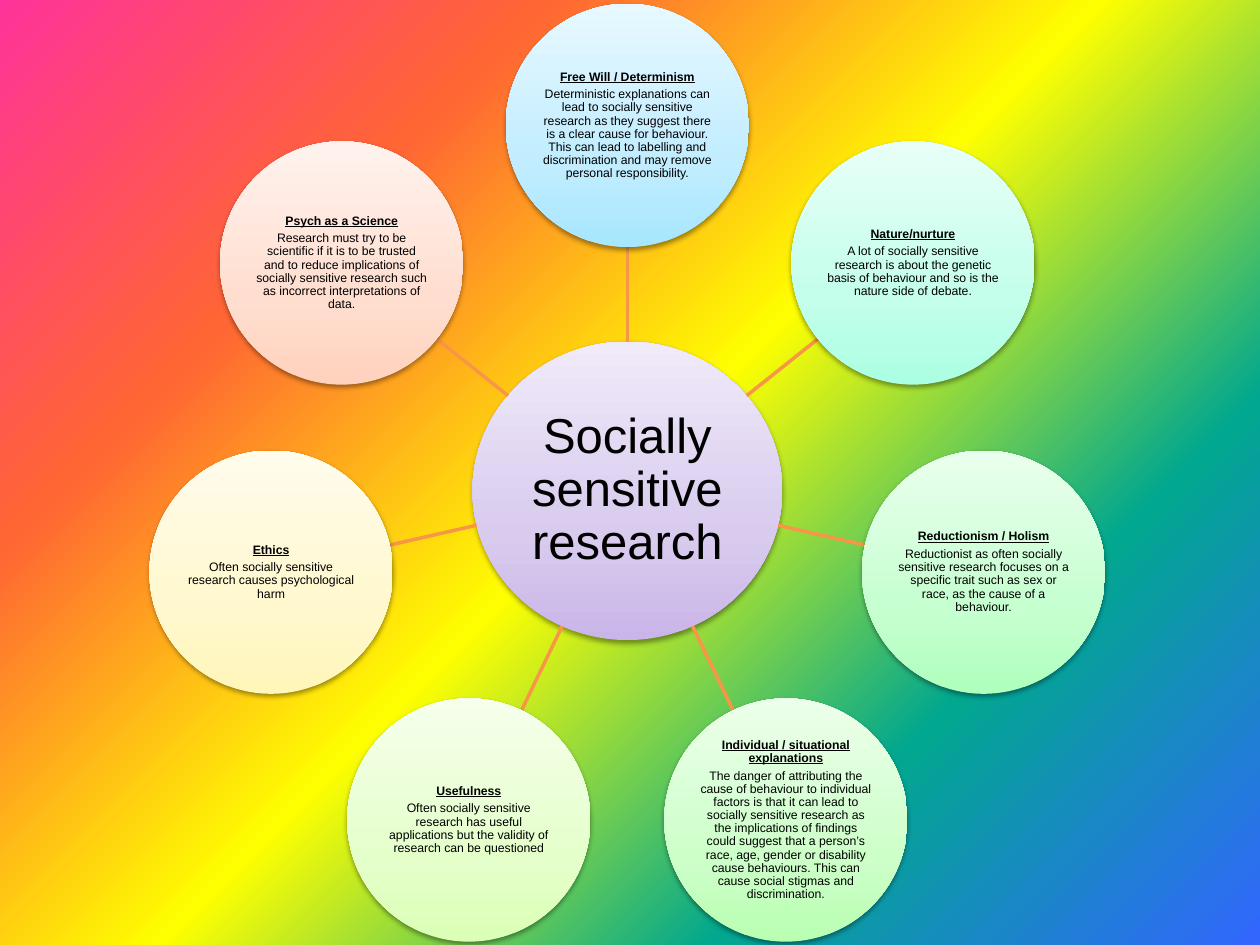
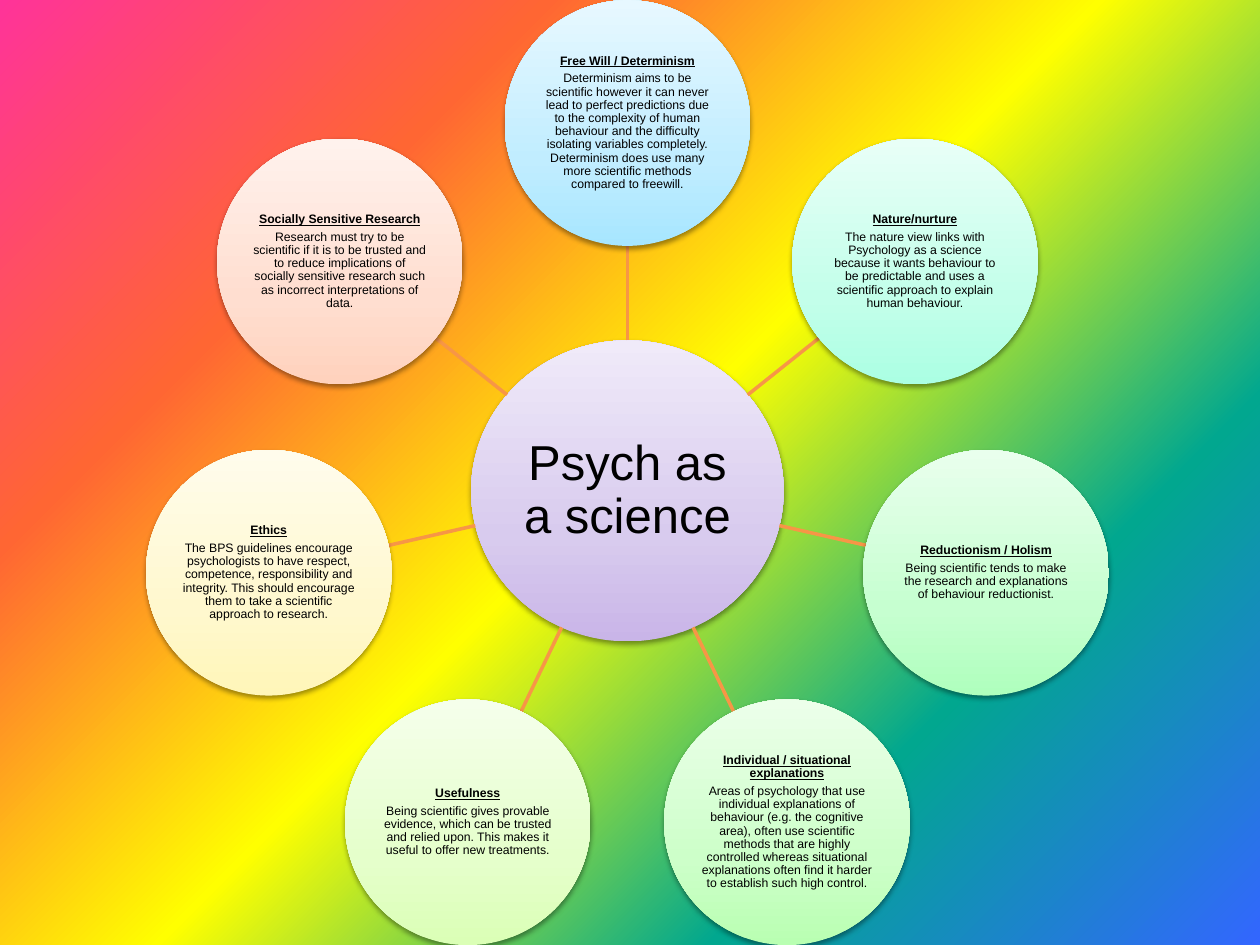
"""Builds two wheel diagrams linking psychology debates to a central theme."""
from math import cos, hypot, pi, sin

from lxml.etree import SubElement
from pptx import Presentation
from pptx.dml.color import RGBColor
from pptx.enum.shapes import MSO_CONNECTOR as CONNECTOR, MSO_SHAPE as SHAPE
from pptx.enum.text import MSO_ANCHOR as ANCHOR, PP_ALIGN as ALIGN
from pptx.oxml.ns import qn
from pptx.util import Pt

FONT = "Arial"
CENTRE_X, CENTRE_Y = 358.5, 280.5
BLACK = RGBColor(0x00, 0x00, 0x00)
ORANGE = RGBColor(0xF7, 0x96, 0x46)


def palette(*codes):
    """Turn hex codes into a tuple of colours."""
    return tuple(RGBColor.from_string(code) for code in codes)


RAINBOW = palette("FF3399", "FF6633", "FFFF00", "01A78F", "3366FF")
RAINBOW_STOPS = (0, 25, 50, 75, 100)
TINT_STOPS = (0, 35, 100)
LILAC = palette("C9B5E8", "D8CBEE", "F0EAF9")
DEBATE_TINTS = (
    palette("A7E6FF", "C1EDFF", "E7F8FF"),
    palette("ABFFE3", "C3FFEA", "E8FFF7"),
    palette("AFFFBD", "C6FFD0", "E9FFED"),
    palette("B9FFB2", "CDFFC9", "ECFFEA"),
    palette("DBFFB6", "E5FFCB", "F5FFEB"),
    palette("FFF6B9", "FFF8CE", "FFFCEC"),
    palette("FFD2BD", "FFDED0", "FFF2ED"),
)
SHARED_DEBATES = (
    "Free Will / Determinism",
    "Nature/nurture",
    "Reductionism / Holism",
    "Individual / situational explanations",
    "Usefulness",
    "Ethics",
)
TRUSTED_RESEARCH = (
    "Research must try to be scientific if it is to be trusted and to reduce "
    "implications of socially sensitive research such as incorrect "
    "interpretations of data."
)
SENSITIVE_WHEEL = dict(
    theme="Socially sensitive research",
    hub_size=(177, 170.6),
    circle_size=139,
    orbit=208.8,
    last_debate="Psych as a Science",
    arguments=(
        "Deterministic explanations can lead to socially sensitive research as "
        "they suggest there is a clear cause for behaviour. This can lead to "
        "labelling and discrimination and may remove personal responsibility.",
        "A lot of socially sensitive research is about the genetic basis of "
        "behaviour and so is the nature side of debate.",
        "Reductionist as often socially sensitive research focuses on a specific "
        "trait such as sex or race, as the cause of a behaviour.",
        "The danger of attributing the cause of behaviour to individual factors "
        "is that it can lead to socially sensitive research as the implications "
        "of findings could suggest that a person’s race, age, gender or "
        "disability cause behaviours. This can cause social stigmas and "
        "discrimination.",
        "Often socially sensitive research has useful applications but the "
        "validity of research can be questioned",
        "Often socially sensitive research causes psychological harm",
        TRUSTED_RESEARCH,
    ),
)
SCIENCE_WHEEL = dict(
    theme="Psych as a science",
    hub_size=(178.6, 172),
    circle_size=140.4,
    orbit=210.2,
    last_debate="Socially Sensitive Research",
    arguments=(
        "Determinism aims to be scientific however it can never lead to perfect "
        "predictions due to the complexity of human behaviour and the difficulty "
        "isolating variables completely. Determinism does use many more "
        "scientific methods compared to freewill.",
        "The nature view links with Psychology as a science because it wants "
        "behaviour to be predictable and uses a scientific approach to explain "
        "human behaviour.",
        "Being scientific tends to make the research and explanations of "
        "behaviour reductionist.",
        "Areas of psychology that use individual explanations of behaviour (e.g. "
        "the cognitive area), often use scientific methods that are highly "
        "controlled whereas situational explanations often find it harder to "
        "establish such high control.",
        "Being scientific gives provable evidence, which can be trusted and "
        "relied upon. This makes it useful to offer new treatments.",
        "The BPS guidelines encourage psychologists to have respect, competence, "
        "responsibility and integrity. This should encourage them to take a "
        "scientific approach to research.",
        TRUSTED_RESEARCH,
    ),
)


def set_gradient(owner, fill, colours, positions, angle):
    """Fill a slide background or a shape with a linear gradient."""
    fill.gradient()
    fill.gradient_angle = angle
    stops = next(owner.element.iter(qn("a:gsLst")))
    stops.clear()
    for colour, position in zip(colours, positions):
        stop = SubElement(stops, qn("a:gs"), pos=str(position * 1000))
        SubElement(stop, qn("a:srgbClr"), val=str(colour))


def add_soft_shadow(circle):
    """Give a circle a faint shadow just below it."""
    circle.shadow.inherit = False
    effects = circle.element.spPr.find(qn("a:effectLst"))
    shadow = SubElement(effects, qn("a:outerShdw"), blurRad=str(Pt(3.1)),
                        dist=str(Pt(1.6)), dir="5400000", rotWithShape="0")
    black = SubElement(shadow, qn("a:srgbClr"), val=str(BLACK))
    SubElement(black, qn("a:alpha"), val="38000")


def add_circle(slide, x, y, width, height, tint, inset=0):
    """Add a tinted ellipse centred on a point and return its text frame."""
    circle = slide.shapes.add_shape(SHAPE.OVAL, Pt(x - width / 2), Pt(y - height / 2),
                                    Pt(width), Pt(height))
    set_gradient(circle, circle.fill, tint, TINT_STOPS, 90)
    circle.line.fill.background()
    add_soft_shadow(circle)
    frame = circle.text_frame
    frame.word_wrap = True
    frame.vertical_anchor = ANCHOR.MIDDLE
    frame.margin_left = frame.margin_right = Pt(inset)
    frame.margin_top = frame.margin_bottom = Pt(inset)
    return frame


def write(paragraph, text, size, heading=False):
    """Write one centred paragraph, bold and underlined for a heading."""
    paragraph.text = text
    paragraph.alignment = ALIGN.CENTER
    paragraph.line_spacing = 0.9
    font = paragraph.font
    font.name, font.size, font.color.rgb = FONT, Pt(size), BLACK
    if heading:
        paragraph.space_after = Pt(2.5)
        font.bold = font.underline = True


def add_hub(slide, theme, width, height):
    """Add the central ellipse with the theme of the wheel."""
    frame = add_circle(slide, CENTRE_X, CENTRE_Y, width, height, LILAC, 1.5)
    write(frame.paragraphs[0], theme, 28)


def add_debate(slide, x, y, size, tint, debate, argument):
    """Add an outer circle with a debate and its argument."""
    frame = add_circle(slide, x, y, size, size, tint)
    write(frame.paragraphs[0], debate, 7, heading=True)
    write(frame.add_paragraph(), argument, 7)


def add_spoke(slide, across, down, start, end):
    """Add a line along a direction between two distances from the centre."""
    ends = [Pt(centre + distance * step) for distance in (start, end)
            for centre, step in ((CENTRE_X, across), (CENTRE_Y, down))]
    spoke = slide.shapes.add_connector(CONNECTOR.STRAIGHT, *ends)
    spoke.line.color.rgb = ORANGE
    spoke.line.width = Pt(2)
    SubElement(spoke.element.spPr, qn("a:effectLst"))


def add_wheel(deck, theme, hub_size, circle_size, orbit, last_debate, arguments):
    """Add a slide with a hub, its spokes and the debates around it."""
    slide = deck.slides.add_slide(deck.slide_layouts[6])
    set_gradient(slide, slide.background.fill, RAINBOW, RAINBOW_STOPS, 315)
    hub_width, hub_height = hub_size
    add_hub(slide, theme, hub_width, hub_height)
    debates = (*SHARED_DEBATES, last_debate)
    for index, (debate, argument, tint) in enumerate(zip(debates, arguments, DEBATE_TINTS)):
        angle = 2 * pi * index / len(debates)
        across, down = sin(angle), -cos(angle)
        hub_edge = 1 / hypot(2 * across / hub_width, 2 * down / hub_height)
        add_spoke(slide, across, down, hub_edge, orbit - circle_size / 2)
        add_debate(slide, CENTRE_X + orbit * across, CENTRE_Y + orbit * down,
                   circle_size, tint, debate, argument)


def main():
    """Build and save the deck."""
    deck = Presentation()
    deck.slide_width, deck.slide_height = Pt(720), Pt(540)
    for wheel in (SENSITIVE_WHEEL, SCIENCE_WHEEL):
        add_wheel(deck, **wheel)
    deck.save("out.pptx")


if __name__ == "__main__":
    main()
